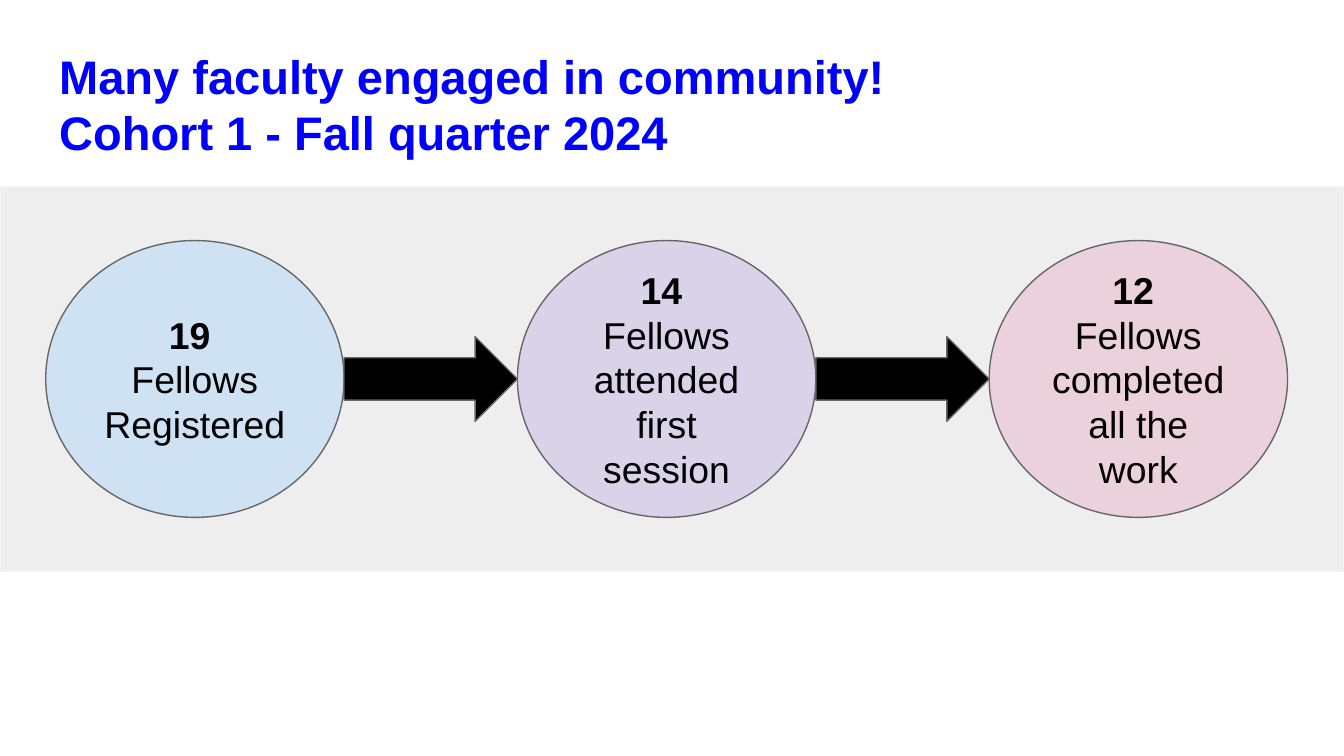
from pptx import Presentation
from pptx.dml.color import RGBColor
from pptx.enum.shapes import MSO_SHAPE
from pptx.enum.text import MSO_ANCHOR, MSO_AUTO_SIZE, PP_ALIGN
from pptx.util import Inches, Pt

RECT, OVAL, ARROW = MSO_SHAPE.RECTANGLE, MSO_SHAPE.OVAL, MSO_SHAPE.RIGHT_ARROW
TOP, MIDDLE = MSO_ANCHOR.TOP, MSO_ANCHOR.MIDDLE
LEFT, CENTER = PP_ALIGN.LEFT, PP_ALIGN.CENTER
FIXED = MSO_AUTO_SIZE.NONE

STAGES = [
    ("19 ", "Fellows Registered", "CFE2F3"),
    ("14 ", "Fellows attended first session", "D9D2E9"),
    ("12 ", "Fellows completed all the work", "EAD1DC"),
]
START, WIDTH, HEIGHT, STEP = 0.34, 2.22, 2.06, 3.51
MID = 2.82
HEAD = 0.63


def color(code):
    """Turn a hex string into a colour."""
    return RGBColor.from_string(code)


def add_form(slide, kind, box, fill, line="666666"):
    """Add a filled, outlined shape without a shadow."""
    form = slide.shapes.add_shape(kind, *map(Inches, box))
    form.shadow.inherit = False
    form.fill.solid()
    form.fill.fore_color.rgb = color(fill)
    form.line.color.rgb = color(line)
    form.line.width = Pt(0.75)
    return form


def set_frame(frame, anchor):
    """Give a text frame even margins and a fixed size."""
    frame.margin_left = frame.margin_right = Inches(0.1)
    frame.margin_top = frame.margin_bottom = Inches(0.1)
    frame.word_wrap = True
    frame.auto_size = FIXED
    frame.vertical_anchor = anchor


def set_font(para, size, code, align):
    """Style a whole paragraph."""
    para.alignment = align
    para.font.name = "Arial"
    para.font.size = Pt(size)
    para.font.color.rgb = color(code)


def add_title(slide, lines):
    """Fill and place the title."""
    title = slide.shapes.title
    title.left, title.top = Inches(0.34), Inches(0.25)
    title.width, title.height = Inches(9.32), Inches(0.63)
    frame = title.text_frame
    set_frame(frame, TOP)
    frame.text = "\n".join(lines)
    for para in frame.paragraphs:
        set_font(para, 25.2, "0000FF", LEFT)
        para.font.bold = True
        para.space_before = Pt(0)


def add_stage(slide, left, count, label, fill):
    """Add a circle with a bold count above its label."""
    box = (left, MID - HEIGHT / 2, WIDTH, HEIGHT)
    frame = add_form(slide, OVAL, box, fill).text_frame
    set_frame(frame, MIDDLE)
    para = frame.paragraphs[0]
    set_font(para, 20, "000000", CENTER)
    run = para.add_run()
    run.text = count
    run.font.bold = True
    para.add_line_break()
    para.add_run().text = label


def main():
    """Build the slide and save it."""
    deck = Presentation()
    deck.slide_width = Inches(10)
    deck.slide_height = deck.slide_width * 9 // 16
    slide = deck.slides.add_slide(deck.slide_layouts[5])
    add_form(slide, RECT, (0, 1.39, 10, 2.86), "EEEEEE", "F3F3F3")
    add_title(slide, ["Many faculty engaged in community!",
                      "Cohort 1 - Fall quarter 2024"])
    lefts = [START + i * STEP for i in range(len(STAGES))]
    for left, stage in zip(lefts, STAGES):
        add_stage(slide, left, *stage)
    for left in lefts[:-1]:
        box = (left + WIDTH, MID - HEAD / 2, STEP - WIDTH, HEAD)
        add_form(slide, ARROW, box, "000000")
    deck.save("out.pptx")


if __name__ == "__main__":
    main()
